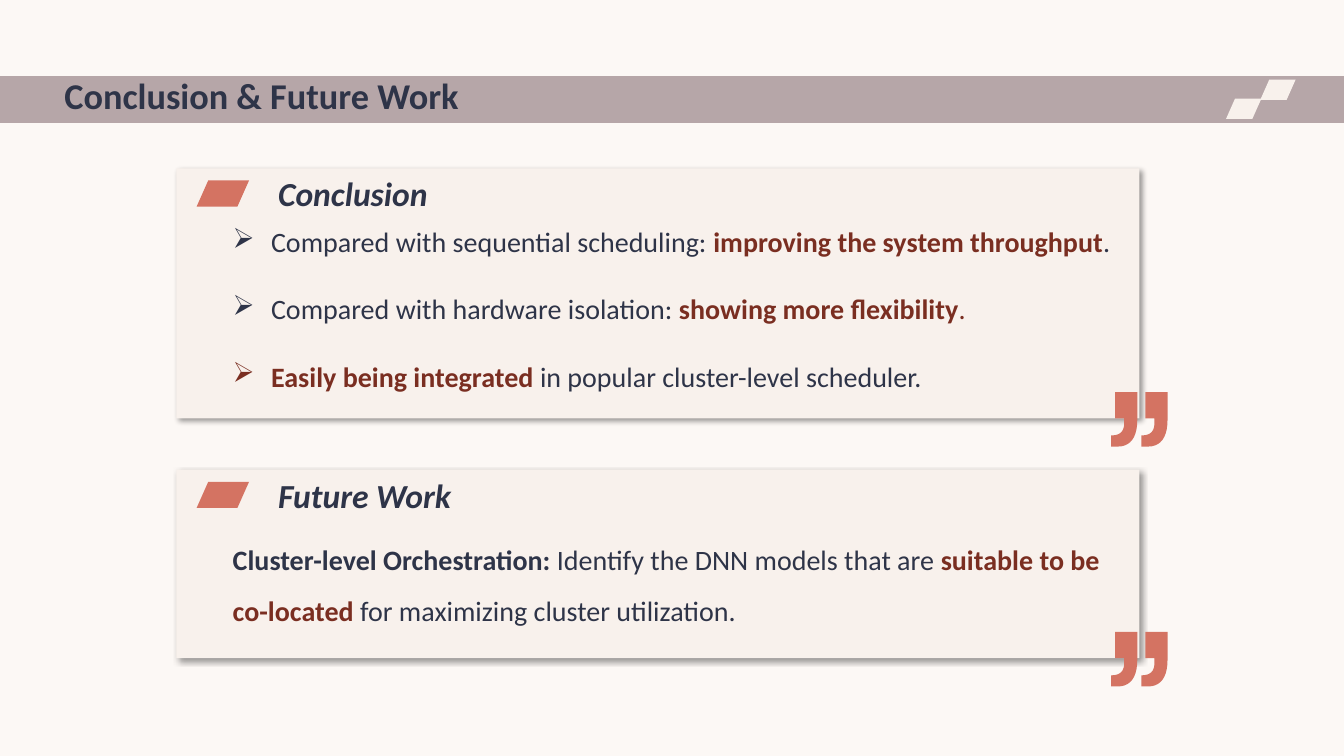
"""Build the Conclusion & Future Work slide."""
import dataclasses
import typing

import lxml.etree
import pptx
import pptx.dml.color
import pptx.enum.shapes
import pptx.enum.text
import pptx.oxml.ns
import pptx.shapes.autoshape
import pptx.shapes.shapetree
import pptx.text.text
import pptx.util

EMU_PER_PX = 9144
SHAPE = pptx.enum.shapes.MSO_SHAPE
Shapes = typing.Union[pptx.shapes.shapetree.SlideShapes, pptx.shapes.shapetree.GroupShapes]
Point = typing.Tuple[float, float]


@dataclasses.dataclass(frozen=True)
class Theme:
    font: str = "Calibri"
    background: str = "FCF8F5"
    bar: str = "B6A6A8"
    card: str = "F8F1EC"
    accent: str = "D47362"
    ink: str = "2E3448"
    strong: str = "7A2E21"
    shadow: str = "000000"
    title_pt: float = 25.9
    heading_pt: float = 24
    body_pt: float = 20


@dataclasses.dataclass(frozen=True)
class Box:
    left: int
    top: int
    width: int
    height: int

    def emu(self) -> typing.List[int]:
        return [px(v) for v in dataclasses.astuple(self)]


@dataclasses.dataclass(frozen=True)
class Run:
    text: str
    color: str
    bold: bool = False
    italic: bool = False


@dataclasses.dataclass(frozen=True)
class Card:
    top: int
    height: int
    heading: str
    heading_width: int
    body: Box
    paragraphs: typing.List[typing.List[Run]]
    bullet: bool = False
    line_spacing: float = 1.0


THEME = Theme()
CARDS = [
    Card(167, 248, "Conclusion", 189, Box(221, 218, 901, 178), [
        [Run("Compared with sequential scheduling: ", THEME.ink),
         Run("improving the system throughput", THEME.strong, True),
         Run(".", THEME.ink)],
        [Run("Compared with hardware isolation: ", THEME.ink),
         Run("showing more flexibility", THEME.strong, True),
         Run(".", THEME.strong)],
        [Run("Easily being integrated ", THEME.strong, True),
         Run("in popular cluster-level scheduler.", THEME.ink)],
    ], bullet=True),
    Card(466, 187, "Future Work", 219, Box(221, 517, 901, 106), [
        [Run("Cluster-level Orchestration: ", THEME.ink, True),
         Run("Identify the DNN models that are ", THEME.ink),
         Run("suitable to be co-located", THEME.strong, True),
         Run(" for maximizing cluster utilization.", THEME.ink)],
    ], line_spacing=1.5),
]


def px(value: float) -> int:
    return round(value * EMU_PER_PX)


def rgb(color: str) -> pptx.dml.color.RGBColor:
    return pptx.dml.color.RGBColor.from_string(color)


def paint(sp: pptx.shapes.autoshape.Shape, color: str) -> None:
    sp.shadow.inherit = False
    sp.fill.solid()
    sp.fill.fore_color.rgb = rgb(color)
    sp.line.fill.background()


def add_shape(shapes: Shapes, kind: SHAPE, box: Box, color: str,
              adjust: float) -> pptx.shapes.autoshape.Shape:
    sp = shapes.add_shape(kind, *box.emu())
    sp.adjustments[0] = adjust
    paint(sp, color)
    return sp


def cast_shadow(sp: pptx.shapes.autoshape.Shape) -> None:
    qn = pptx.oxml.ns.qn
    effects = sp._element.spPr.find(qn("a:effectLst"))
    shadow = lxml.etree.SubElement(effects, qn("a:outerShdw"), blurRad=str(pptx.util.Pt(4)),
                                   dist=str(pptx.util.Pt(3)), dir="2700000",
                                   algn="tl", rotWithShape="0")
    color = lxml.etree.SubElement(shadow, qn("a:srgbClr"), val=THEME.shadow)
    lxml.etree.SubElement(color, qn("a:alpha"), val="40000")


def add_bullet(p: pptx.text.text._Paragraph) -> None:
    pPr = p._p.get_or_add_pPr()
    pPr.set("marL", str(px(38)))
    pPr.set("indent", str(-px(38)))
    lxml.etree.SubElement(pPr, pptx.oxml.ns.qn("a:buChar"), char="➢")


def add_text(shapes: Shapes, box: Box, paragraphs: typing.List[typing.List[Run]], size: float,
             line_spacing: float = 1.0, bullet: bool = False,
             anchor: pptx.enum.text.MSO_ANCHOR = pptx.enum.text.MSO_ANCHOR.TOP) -> None:
    tf = shapes.add_textbox(*box.emu()).text_frame
    tf.word_wrap = True
    tf.vertical_anchor = anchor
    for i, runs in enumerate(paragraphs):
        p = tf.add_paragraph() if i else tf.paragraphs[0]
        if bullet:
            add_bullet(p)
        p.line_spacing = line_spacing
        if i:
            p.space_before = pptx.util.Pt(24)
        for run in runs:
            r = p.add_run()
            r.text = run.text
            r.font.name = THEME.font
            r.font.size = pptx.util.Pt(size)
            r.font.bold = run.bold
            r.font.italic = run.italic
            r.font.color.rgb = rgb(run.color)


def curve(a: Point, b: Point, c: Point, d: Point, steps: int = 10) -> typing.List[Point]:
    weights = [((1 - t) ** 3, 3 * t * (1 - t) ** 2, 3 * t * t * (1 - t), t ** 3)
               for t in (i / steps for i in range(steps + 1))]
    return [(sum(w * q[0] for w, q in zip(ws, (a, b, c, d))),
             sum(w * q[1] for w, q in zip(ws, (a, b, c, d)))) for ws in weights]


def add_quote_mark(shapes: Shapes, left: int, top: int) -> None:
    comma = [(4, 0), (26, 0), *curve((26, 28), (26, 45), (19, 54), (7, 54)), (0, 54),
             *curve((0, 43), (9, 43), (13, 39), (13, 31)), (13, 26), (4, 26)]
    strokes = [[(px(left + dx + x), px(top + y)) for x, y in comma] for dx in (30, 0)]
    builder = shapes.build_freeform(*strokes[0][0], scale=1.0)
    builder.add_line_segments(strokes[0][1:])
    builder.move_to(*strokes[1][0])
    builder.add_line_segments(strokes[1][1:])
    paint(builder.convert_to_shape(), THEME.accent)


def add_card(shapes: Shapes, card: Card) -> None:
    group = shapes.add_group_shape().shapes
    panel = Box(175, card.top, 955, card.height)
    cast_shadow(add_shape(group, SHAPE.ROUNDED_RECTANGLE, panel, THEME.card, 0))
    add_shape(group, SHAPE.PARALLELOGRAM, Box(195, card.top + 12, 52, 26), THEME.accent, 0.444)
    add_quote_mark(group, 1102, card.top + card.height - 26)
    add_text(group, card.body, card.paragraphs, THEME.body_pt, card.line_spacing, card.bullet)
    add_text(group, Box(266, card.top, card.heading_width, 50),
             [[Run(card.heading, THEME.ink, True, True)]], THEME.heading_pt)


def main() -> None:
    prs = pptx.Presentation()
    prs.slide_width, prs.slide_height = px(1333), px(750)
    s = prs.slides.add_slide(prs.slide_layouts[6])
    s.background.fill.solid()
    s.background.fill.fore_color.rgb = rgb(THEME.background)
    add_shape(s.shapes, SHAPE.PARALLELOGRAM, Box(0, 75, 1333, 47), THEME.bar, 0)
    for left, top in ((1250, 79), (1216, 98)):
        add_shape(s.shapes, SHAPE.PARALLELOGRAM, Box(left, top, 35, 20), THEME.card, 0.444)
    add_text(s.shapes, Box(54, 75, 1162, 47),
             [[Run("Conclusion & Future Work", THEME.ink, True)]], THEME.title_pt,
             line_spacing=0.8, anchor=pptx.enum.text.MSO_ANCHOR.MIDDLE)
    for card in CARDS:
        add_card(s.shapes, card)
    prs.save("out.pptx")


if __name__ == "__main__":
    main()
